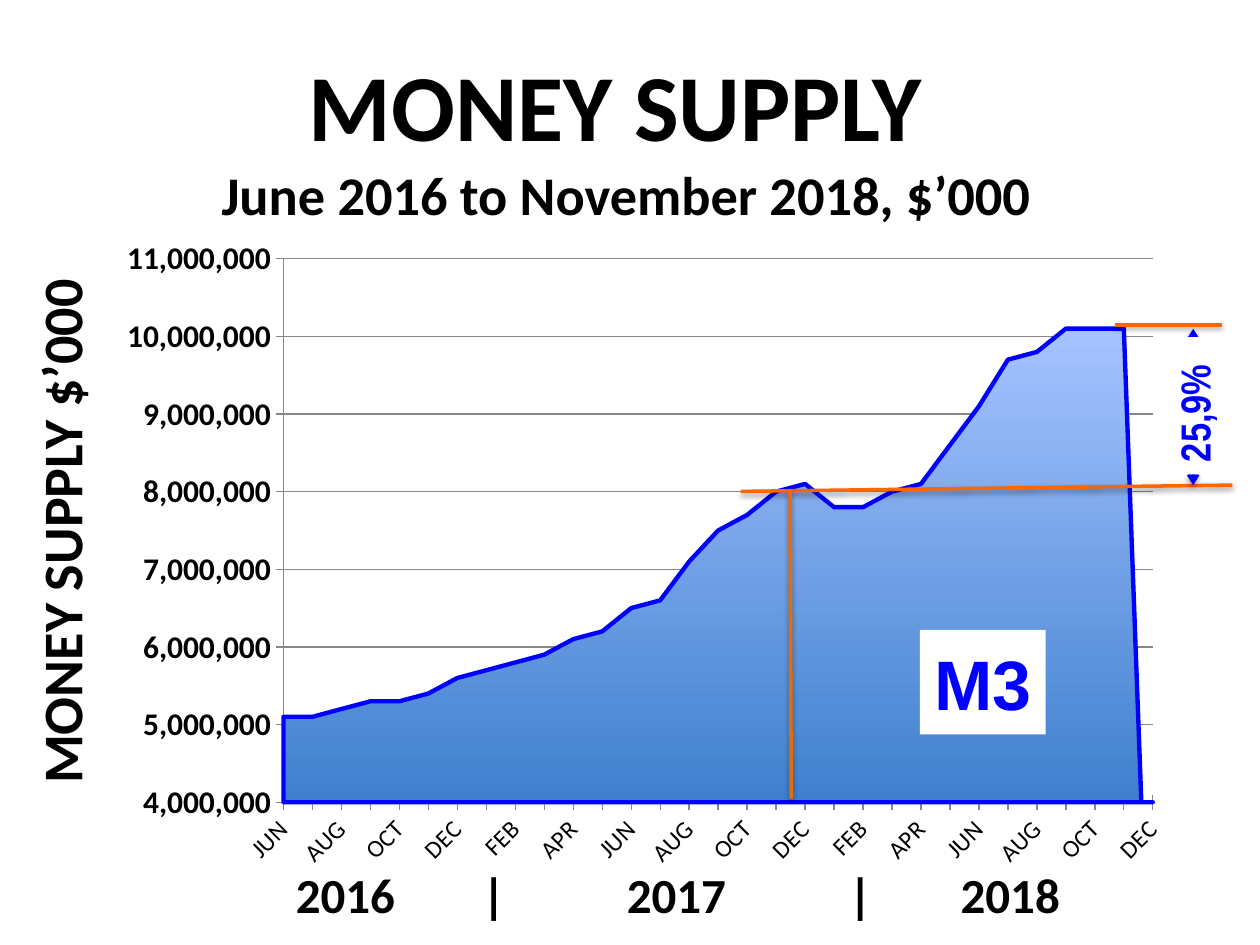
from dataclasses import dataclass

from lxml import etree
from pptx import Presentation
from pptx.chart.data import CategoryChartData
from pptx.dml.color import RGBColor
from pptx.enum.chart import XL_CHART_TYPE, XL_TICK_MARK
from pptx.enum.shapes import MSO_CONNECTOR, MSO_SHAPE
from pptx.enum.text import MSO_ANCHOR, PP_ALIGN
from pptx.oxml.ns import qn
from pptx.util import Inches, Pt

AREA = XL_CHART_TYPE.AREA
CROSS = XL_TICK_MARK.CROSS
STRAIGHT = MSO_CONNECTOR.STRAIGHT
RECTANGLE = MSO_SHAPE.RECTANGLE
TOP, MIDDLE = MSO_ANCHOR.TOP, MSO_ANCHOR.MIDDLE
LEFT, CENTER = PP_ALIGN.LEFT, PP_ALIGN.CENTER

COLUMNS, ROWS = 100, 75
CELL = Inches(0.1)


@dataclass(frozen=True)
class Theme:
    text: str = "000000"
    accent: str = "0000FF"
    marker: str = "FF6600"
    divider: str = "E46C0A"
    paper: str = "FFFFFF"
    grid: str = "868686"
    area_bottom: str = "3F80CD"
    area_top: str = "A6C3FF"
    font: str = "Calibri"
    badge_font: str = "Arial"
    growth_font: str = "Arial Narrow"
    title: float = 54
    subtitle: float = 31.1
    side_title: float = 32
    years: float = 28
    badge: float = 40
    growth: float = 24
    values: float = 18
    months: float = 14


THEME = Theme()

MONTHS = "JAN FEB MAR APR MAY JUN JUL AUG SEP OCT NOV DEC".split()
FIRST_MONTH = MONTHS.index("JUN")
MILLIONS = [5.1, 5.1, 5.2, 5.3, 5.3, 5.4, 5.6, 5.7, 5.8, 5.9, 6.1, 6.2, 6.5, 6.6, 7.1,
            7.5, 7.7, 8.0, 8.1, 7.8, 7.8, 8.0, 8.1, 8.6, 9.1, 9.7, 9.8, 10.1, 10.1, 10.1,
            None]


def color(value):
    return RGBColor.from_string(value)


def cells(*counts):
    """Turn counts of grid cells into lengths."""
    return [round(count * CELL) for count in counts]


def child(parent, tag, **attributes):
    element = etree.SubElement(parent, qn(tag))
    for name, value in attributes.items():
        element.set(name, str(value))
    return element


def write(shape, *lines, size, font=THEME.font, ink=THEME.text, align=LEFT,
          anchor=TOP, wrap=False, tabs=()):
    """Write bold lines, joined by line breaks; size is one number or one per line."""
    frame = shape.text_frame
    frame.word_wrap = wrap
    frame.vertical_anchor = anchor
    paragraph = frame.paragraphs[0]
    paragraph.alignment = align
    sizes = size if isinstance(size, tuple) else (size,) * len(lines)
    for index, (line, points) in enumerate(zip(lines, sizes)):
        if index:
            paragraph.add_line_break()
        run = paragraph.add_run()
        run.text = line
        run.font.name, run.font.size, run.font.bold = font, Pt(points), True
        run.font.color.rgb = color(ink)
    if tabs:
        tab_list = child(paragraph._p.get_or_add_pPr(), "a:tabLst")
        for position in cells(*tabs):
            child(tab_list, "a:tab", pos=position, algn="ctr")


def add_text(slide, box, *lines, rotation=0, **text_format):
    shape = slide.shapes.add_textbox(*cells(*box))
    shape.rotation = rotation
    write(shape, *lines, **text_format)


def add_label(slide, box, text, rotation=0, **text_format):
    """Add text on a plain paper-coloured rectangle."""
    shape = slide.shapes.add_shape(RECTANGLE, *cells(*box))
    shape.shadow.inherit = False
    shape.fill.solid()
    shape.fill.fore_color.rgb = color(THEME.paper)
    shape.line.fill.background()
    shape.rotation = rotation
    write(shape, text, **text_format)


def add_line(slide, start, end, ink, arrows=False):
    line = slide.shapes.add_connector(STRAIGHT, *cells(*start, *end))
    line.line.color.rgb = color(ink)
    line.line.width = Pt(2)
    properties = line._element.spPr
    if arrows:
        outline = line.line._get_or_add_ln()
        for tag in ("a:headEnd", "a:tailEnd"):
            child(outline, tag, type="arrow")
    shadow = child(child(properties, "a:effectLst"), "a:outerShdw",
                   blurRad=Pt(3.1), dist=Pt(1.6), dir=5400000, rotWithShape=0)
    child(child(shadow, "a:srgbClr", val="000000"), "a:alpha", val=38000)


def style_axis(axis, size, bold):
    axis.major_tick_mark = CROSS
    axis.format.line.color.rgb = color(THEME.grid)
    font = axis.tick_labels.font
    font.name, font.size, font.bold = THEME.font, Pt(size), bold
    font.color.rgb = color(THEME.text)


def place_plot(chart, x, y, w, h):
    """Fix the inner plot area, in shares of the chart."""
    plot_area = chart._chartSpace.chart.plotArea
    for old in plot_area.findall(qn("c:layout")):
        plot_area.remove(old)
    layout = etree.Element(qn("c:layout"))
    plot_area.insert(0, layout)
    manual = child(layout, "c:manualLayout")
    child(manual, "c:layoutTarget", val="inner")
    for mode in ("c:xMode", "c:yMode"):
        child(manual, mode, val="edge")
    for name, share in zip("xywh", (x, y, w, h)):
        child(manual, "c:" + name, val=share)


def add_money_chart(slide, box):
    data = CategoryChartData()
    data.categories = [MONTHS[(FIRST_MONTH + step) % 12] for step in range(len(MILLIONS))]
    data.add_series("Series 1", [None if value is None else round(value * 1_000_000)
                                 for value in MILLIONS])
    chart = slide.shapes.add_chart(AREA, *cells(*box), data).chart
    chart.has_legend = chart.has_title = False
    chart.font.name, chart.font.size = THEME.font, Pt(THEME.values)
    chart.plots[0].vary_by_categories = False

    series = chart.plots[0].series[0].format
    series.fill.gradient()
    series.fill.gradient_angle = 90
    for stop, shade in zip(series.fill.gradient_stops, (THEME.area_bottom, THEME.area_top)):
        stop.color.rgb = color(shade)
    series.line.color.rgb = color(THEME.accent)
    series.line.width = Pt(2.5)

    months, values = chart.category_axis, chart.value_axis
    style_axis(months, THEME.months, False)
    style_axis(values, THEME.values, True)
    months.has_major_gridlines = False
    months._element.txPr.bodyPr.set("rot", "-2700000")
    values.minimum_scale, values.maximum_scale = 4_000_000, 11_000_000
    values.major_unit = 1_000_000
    values.major_gridlines.format.line.color.rgb = color(THEME.grid)
    values.tick_labels.number_format = r"#,##0;\-#.##0"
    values.tick_labels.number_format_is_linked = False
    values._element.find(qn("c:crossBetween")).set("val", "midCat")
    chart._chartSpace.chart.find(qn("c:dispBlanksAs")).set("val", "zero")
    place_plot(chart, 0.167, 0.03, 0.795, 0.841)


def main():
    presentation = Presentation()
    presentation.slide_width, presentation.slide_height = cells(COLUMNS, ROWS)
    slide = presentation.slides.add_slide(presentation.slide_layouts[6])

    add_money_chart(slide, (8, 19, 86.8, 51.3))
    add_text(slide, (4.7, 0.8, 90, 20.1), "MONEY SUPPLY ", "June 2016 to November 2018, $’000",
             size=(THEME.title, THEME.subtitle), align=CENTER, anchor=MIDDLE, wrap=True)
    add_text(slide, (-16.4, 38.8, 42.4, 6.4), "MONEY SUPPLY $’000",
             rotation=270, size=THEME.side_title)
    add_line(slide, (58.8, 39), (97.8, 38.5), THEME.marker)
    add_line(slide, (94.7, 38.5), (94.7, 26.1), THEME.accent, arrows=True)
    add_label(slide, (89.3, 29.7, 10.9, 5), "25,9%", rotation=270, size=THEME.growth,
              font=THEME.growth_font, ink=THEME.accent, wrap=True)
    add_text(slide, (22.5, 68.1, 63.4, 5.7), "2016\t|\t2017\t|\t2018",
             size=THEME.years, tabs=(15.7, 30.2, 44.8, 56.7))
    add_line(slide, (88.5, 25.8), (97, 25.8), THEME.marker)
    add_label(slide, (73, 50, 10, 8.3), "M3", size=THEME.badge, font=THEME.badge_font,
              ink=THEME.accent, align=CENTER, anchor=MIDDLE)
    add_line(slide, (62.8, 63.4), (62.7, 38.8), THEME.divider)

    presentation.save("out.pptx")


if __name__ == "__main__":
    main()
